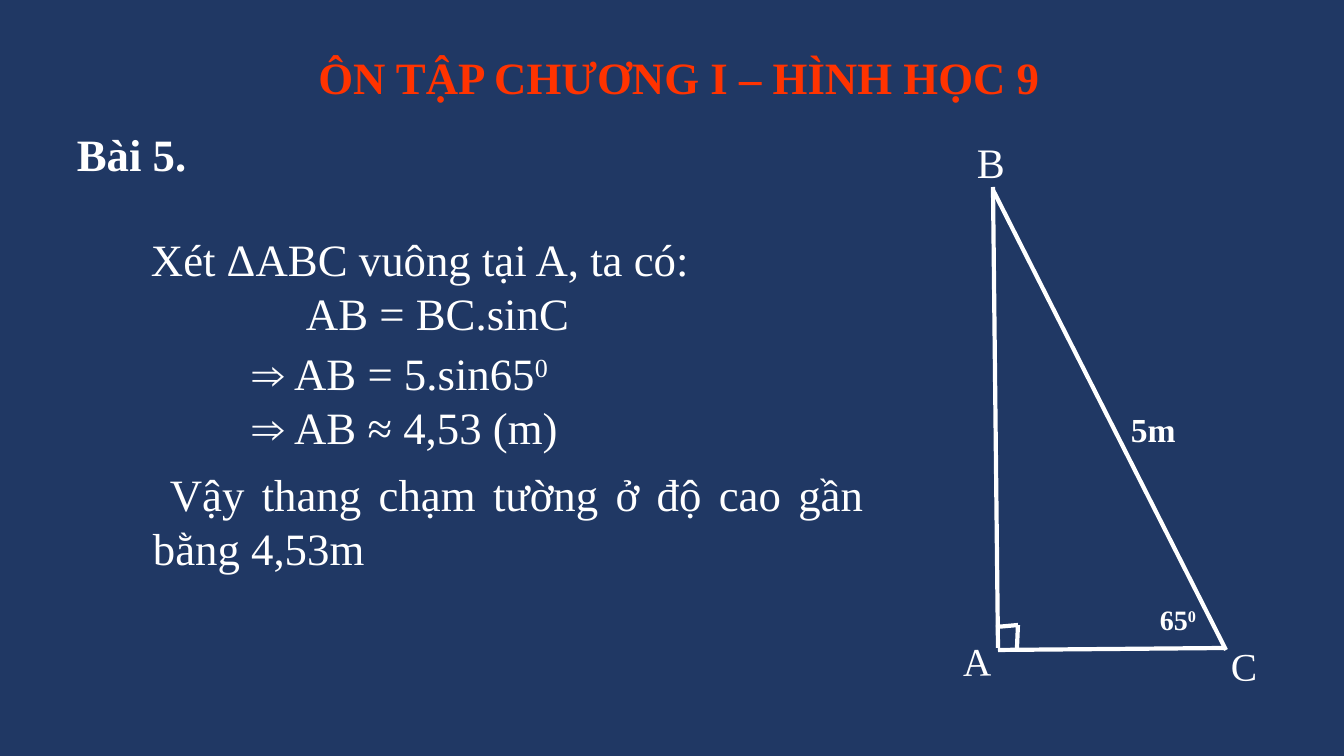
"""Builds a geometry review slide that solves a ladder problem with a right triangle."""
from dataclasses import dataclass

import pptx
import pptx.dml.color
import pptx.enum.shapes
import pptx.enum.text
import pptx.oxml
import pptx.oxml.ns
import pptx.util

ALIGN = pptx.enum.text.PP_ALIGN
EMU_PER_PX = 914400 / 100.8


def px(length):
    return pptx.util.Emu(round(length * EMU_PER_PX))


@dataclass(frozen=True)
class Theme:
    font: str = "Times New Roman"
    background: str = "203864"
    ink: str = "FFFFFF"
    heading: str = "FF3300"
    body_size: int = 32
    top_vertex_size: int = 30
    vertex_size: int = 28
    length_size: int = 24
    angle_size: int = 20
    line_width: int = 3


@dataclass(frozen=True)
class Line:
    text: str
    power: str = ""
    left: int = 0
    first: int = 0


class Board:
    def __init__(self, deck, theme):
        self.theme = theme
        self.slide = deck.slides.add_slide(deck.slide_layouts[6])
        fill = self.slide.background.fill
        fill.solid()
        fill.fore_color.rgb = self.color(theme.background)

    @staticmethod
    def color(value):
        return pptx.dml.color.RGBColor.from_string(value)

    def text(self, box, lines, size=None, color=None, bold=False,
             align=ALIGN.JUSTIFY, wrap=True, rotation=0):
        block = self.slide.shapes.add_textbox(*map(px, box))
        block.rotation = rotation
        frame = block.text_frame
        frame.word_wrap = wrap
        frame.auto_size = pptx.enum.text.MSO_AUTO_SIZE.SHAPE_TO_FIT_TEXT
        frame.text = "\n".join(line.text for line in lines)
        for paragraph, line in zip(frame.paragraphs, lines):
            paragraph.alignment = align
            if line.left or line.first:
                properties = paragraph._p.get_or_add_pPr()
                properties.set("marL", str(px(line.left)))
                properties.set("indent", str(px(line.first)))
            if line.power:
                power = paragraph.add_run()
                power.text = line.power
                power._r.get_or_add_rPr().set("baseline", "30000")
            for run in paragraph.runs:
                run.font.name = self.theme.font
                run.font.size = pptx.util.Pt(size or self.theme.body_size)
                run.font.bold = bold
                run.font.color.rgb = self.color(color or self.theme.ink)

    def label(self, box, line, size, bold=False, rotation=0):
        self.text(box, [line], size, bold=bold, align=ALIGN.LEFT,
                  wrap=False, rotation=rotation)

    def segment(self, start, end):
        side = self.slide.shapes.add_connector(
            pptx.enum.shapes.MSO_CONNECTOR.STRAIGHT, *map(px, start + end))
        side.line.color.rgb = self.color(self.theme.ink)
        side.line.width = pptx.util.Pt(self.theme.line_width)
        side._element.spPr.append(pptx.oxml.parse_xml(
            f"<a:effectLst {pptx.oxml.ns.nsdecls('a')}/>"))


def main():
    deck = pptx.Presentation()
    deck.slide_width, deck.slide_height = px(1344), px(756)
    theme = Theme()
    board = Board(deck, theme)

    board.text((294, 45, 770, 65), [Line("ÔN TẬP CHƯƠNG I – HÌNH HỌC 9")],
               color=theme.heading, bold=True, align=ALIGN.CENTER)
    board.text((67, 122, 599, 65), [Line("Bài 5.")], bold=True)
    board.text((141, 227, 663, 119), [Line("Xét ΔABC vuông tại A, ta có:"),
                                      Line("AB = BC.sinC", left=155)])
    board.text((143, 341, 663, 119), [Line("⇒ AB = 5.sin65", "0", left=100),
                                      Line("⇒ AB ≈ 4,53 (m)", left=100)])
    board.text((143, 462, 731, 119),
               [Line("Vậy thang chạm tường ở độ cao gần bằng 4,53m", first=17)])

    triangle = [((998, 650), (1226, 648)), ((998, 648), (993, 187)),
                ((993, 190), (1226, 650))]
    right_angle = [((996, 627), (1018, 625)), ((1018, 625), (1017, 648))]
    for start, end in triangle + right_angle:
        board.segment(start, end)

    tilt = 358.8
    board.label((953, 632, 49, 57), Line("A"), theme.vertex_size, rotation=tilt)
    board.label((1221, 637, 46, 57), Line("C"), theme.vertex_size, rotation=tilt)
    board.label((967, 132, 48, 61), Line("B"), theme.top_vertex_size)
    board.label((1121, 404, 65, 50), Line("5m"), theme.length_size, bold=True)
    board.label((1150, 598, 58, 44), Line("65", "0"), theme.angle_size, bold=True)

    deck.save("out.pptx")


if __name__ == "__main__":
    main()
